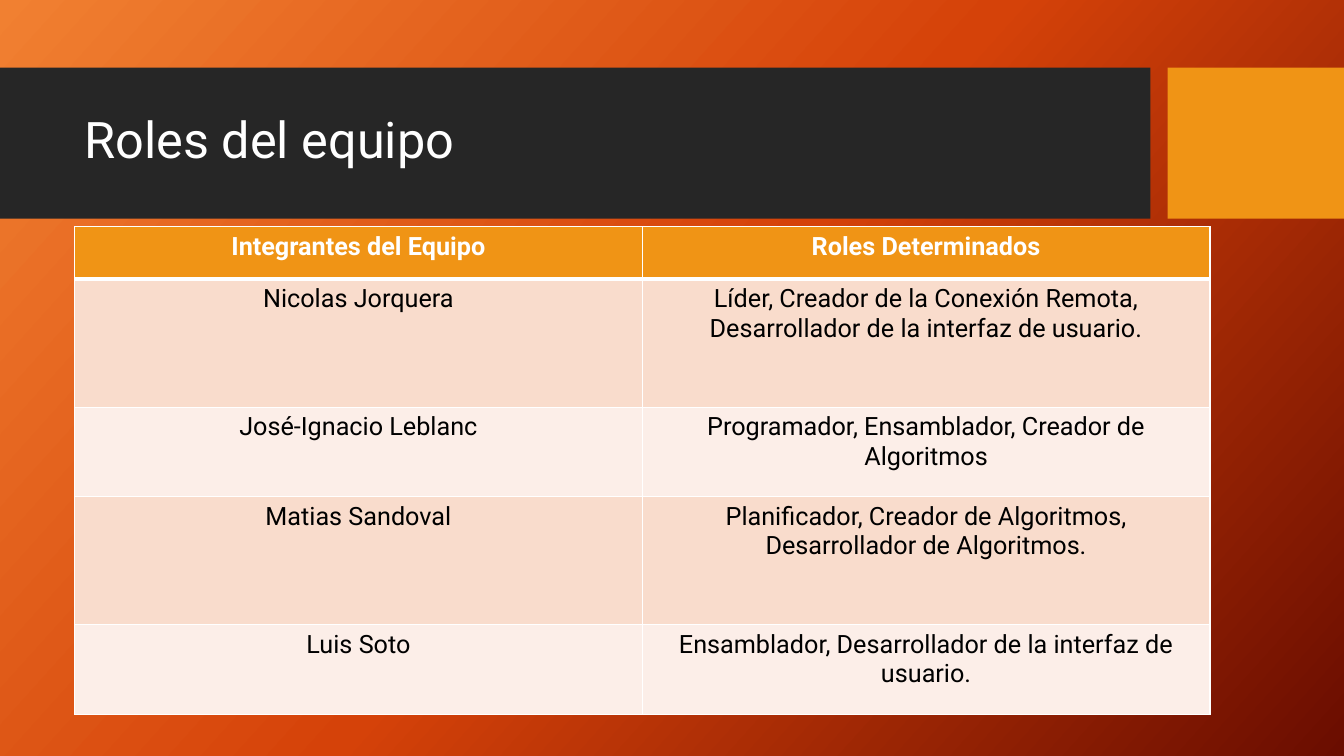
import copy
import pptx
import pptx.dml.color
import pptx.enum.shapes
import pptx.enum.text
import pptx.oxml
import pptx.oxml.ns
import pptx.util

TITLE = "Roles del equipo"
HEADER = ("Integrantes del Equipo", "Roles Determinados")
TEAM = [
    ("Nicolas Jorquera", "Líder, Creador de la Conexión Remota, Desarrollador de la interfaz de usuario."),
    ("José-Ignacio Leblanc", "Programador, Ensamblador, Creador de Algoritmos"),
    ("Matias Sandoval", "Planificador, Creador de Algoritmos, Desarrollador de Algoritmos."),
    ("Luis Soto", "Ensamblador, Desarrollador de la interfaz de usuario."),
]
THEME = {
    "font": "Roboto",
    "title_size": 36,
    "table_size": 18,
    "white": "FFFFFF",
    "black": "000000",
    "band": "262626",
    "accent": "F09415",
    "rows": ("F9DCCC", "FCEEE8"),
    "gradient": ((0, "F18031"), (0.5, "D54209"), (1, "6A0D00")),
    "angle": 42,
}
WIDTH, HEIGHT = 13.33, 7.5
BAND_TOP, BAND_HEIGHT = 0.67, 1.5
BLOCK_WIDTH = 1.75
BAND_WIDTH = 11.41
MARGIN = 0.74
TABLE_TOP, COLUMN_WIDTH = 2.25, 5.63
HEADER_HEIGHT, ROW_HEIGHTS = 0.52, (1.27, 0.89)
THIN, THICK = 1, 3

inches = pptx.util.Inches


def color(value):
    return pptx.dml.color.RGBColor.from_string(value)


def apply(target, values):
    for name, value in values.items():
        setattr(target, name, value)


def write(frame, text, size, ink, bold=False, **paragraph):
    para = frame.paragraphs[0]
    apply(para, paragraph)
    span = para.add_run()
    span.text = text
    apply(span.font, {"name": THEME["font"], "size": pptx.util.Pt(size), "bold": bold})
    span.font.color.rgb = color(ink)


def paint_background(page):
    fill = page.background.fill
    fill.gradient()
    stops = page.element.xpath(".//a:gsLst")[0]
    stops.append(copy.deepcopy(stops[-1]))
    for stop, (position, value) in zip(fill.gradient_stops, THEME["gradient"]):
        stop.position = position
        stop.color.rgb = color(value)
    fill.gradient_angle = 360 - THEME["angle"]


def add_band(page, left, width, fill):
    band = page.shapes.add_shape(
        pptx.enum.shapes.MSO_SHAPE.RECTANGLE,
        *map(inches, (left, BAND_TOP, width, BAND_HEIGHT)))
    band.shadow.inherit = False
    band.fill.solid()
    band.fill.fore_color.rgb = color(fill)
    band.line.fill.background()


def add_title(page):
    box = page.shapes.add_textbox(*map(inches, (MARGIN, 0.82, 10.51, 1.18)))
    apply(box.text_frame, {
        "word_wrap": True,
        "vertical_anchor": pptx.enum.text.MSO_ANCHOR.MIDDLE,
    })
    write(box.text_frame, TITLE, THEME["title_size"], THEME["white"], line_spacing=0.9)


def set_borders(cell, widths):
    properties = cell._tc.get_or_add_tcPr()
    for position, (side, width) in enumerate(widths.items()):
        properties.insert(position, pptx.oxml.parse_xml(
            f'<a:{side} {pptx.oxml.ns.nsdecls("a")} w="{pptx.util.Pt(width)}">'
            f'<a:solidFill><a:srgbClr val="{THEME["white"]}"/></a:solidFill></a:{side}>'))


def add_team_table(page):
    rows = [HEADER, *TEAM]
    heights = [HEADER_HEIGHT] + [ROW_HEIGHTS[i % 2] for i in range(len(TEAM))]
    table = page.shapes.add_table(
        len(rows), len(HEADER),
        *map(inches, (MARGIN, TABLE_TOP, COLUMN_WIDTH * len(HEADER), sum(heights)))).table
    for column in table.columns:
        column.width = inches(COLUMN_WIDTH)
    for i, (texts, height) in enumerate(zip(rows, heights)):
        table.rows[i].height = inches(height)
        head = i == 0
        fill = THEME["accent"] if head else THEME["rows"][(i - 1) % 2]
        ink = THEME["white"] if head else THEME["black"]
        for j, text in enumerate(texts):
            cell = table.cell(i, j)
            cell.fill.solid()
            cell.fill.fore_color.rgb = color(fill)
            set_borders(cell, {
                "lnL": THIN, "lnR": THIN,
                "lnT": THICK if i == 1 else THIN,
                "lnB": THICK if head else THIN,
            })
            write(cell.text_frame, text, THEME["table_size"], ink, head,
                  alignment=pptx.enum.text.PP_ALIGN.CENTER)


def main():
    deck = pptx.Presentation()
    apply(deck, {"slide_width": inches(WIDTH), "slide_height": inches(HEIGHT)})
    page = deck.slides.add_slide(deck.slide_layouts[6])
    paint_background(page)
    add_band(page, 0, BAND_WIDTH, THEME["band"])
    add_band(page, WIDTH - BLOCK_WIDTH, BLOCK_WIDTH, THEME["accent"])
    add_title(page)
    add_team_table(page)
    deck.save("out.pptx")


if __name__ == "__main__":
    main()
